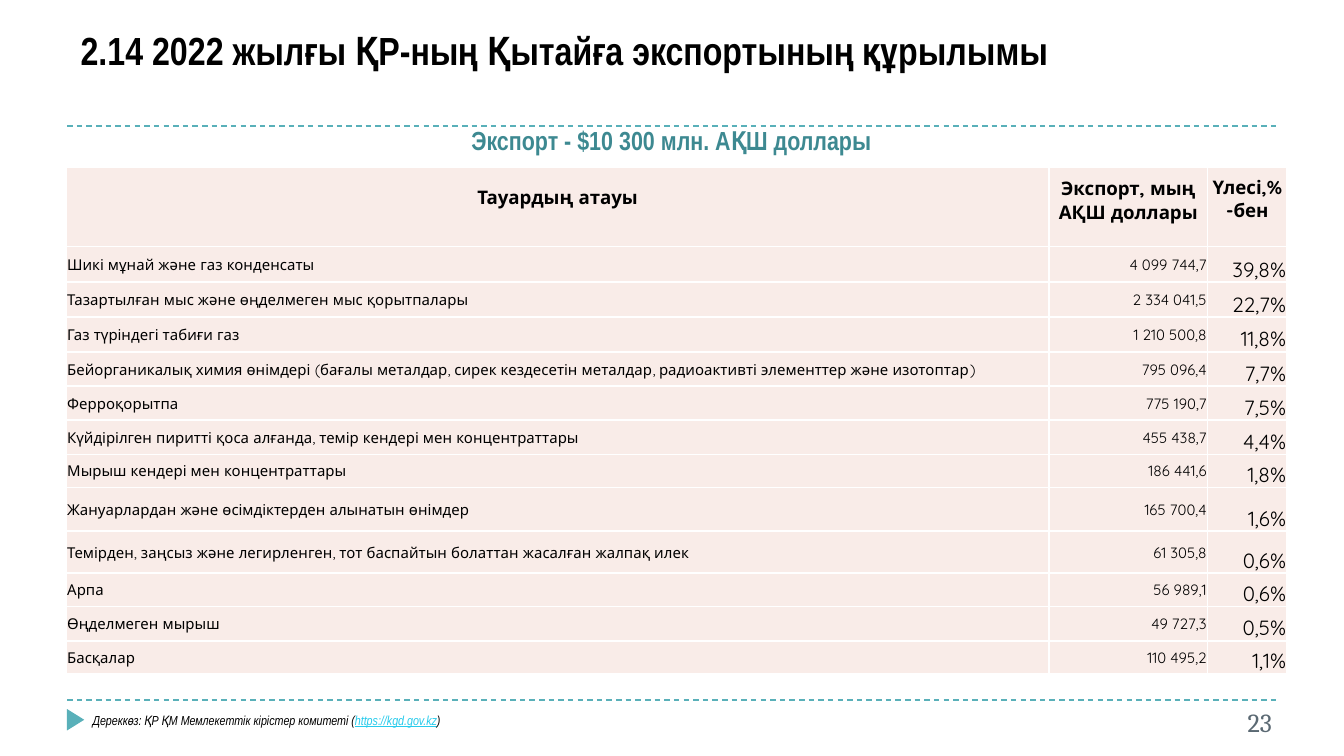
import pptx
import pptx.dml.color
import pptx.enum.dml
import pptx.enum.shapes
import pptx.enum.text
import pptx.oxml
import pptx.oxml.ns
import pptx.util

Pt = pptx.util.Pt
ALIGN = pptx.enum.text.PP_ALIGN
ANCHOR = pptx.enum.text.MSO_ANCHOR

TEAL, BLACK, CELL_FILL, BORDER = "59B0B9", "000000", "F9ECE8", "FFFFFF"
NARROW, TABLE_FONT = "Arial Narrow", "Quicksand"

COLUMN_WIDTHS = [526.5, 85, 42.5]
ROW_HEIGHTS = [42.5, 19.25, 18.75, 18.5, 18.5, 18.25, 18.25, 17.75,
               23.5, 22.5, 17.75, 18.5, 17.75]
HEADERS = ["Тауардың атауы", "Экспорт, мың АҚШ доллары", "Үлесі,% -бен"]
HEADER_BOTTOM_MARGINS = [10.5, 7, 13]
EXPORTS = [
    ("Шикі мұнай және газ конденсаты", "4 099 744,7", "39,8%"),
    ("Тазартылған мыс және өңделмеген мыс қорытпалары", "2 334 041,5", "22,7%"),
    ("Газ түріндегі табиғи газ", "1 210 500,8", "11,8%"),
    ("Бейорганикалық химия өнімдері (бағалы металдар, сирек кездесетін металдар, "
     "радиоактивті элементтер және изотоптар)", "795 096,4", "7,7%"),
    ("Ферроқорытпа", "775 190,7", "7,5%"),
    ("Күйдірілген пиритті қоса алғанда, темір кендері мен концентраттары",
     "455 438,7", "4,4%"),
    ("Мырыш кендері мен концентраттары", "186 441,6", "1,8%"),
    ("Жануарлардан және өсімдіктерден алынатын өнімдер", "165 700,4", "1,6%"),
    ("Темірден, заңсыз және легирленген, тот баспайтын болаттан жасалған жалпақ илек",
     "61 305,8", "0,6%"),
    ("Арпа", "56 989,1", "0,6%"),
    ("Өңделмеген мырыш", "49 727,3", "0,5%"),
    ("Басқалар", "110 495,2", "1,1%"),
]


def rgb(value):
    return pptx.dml.color.RGBColor.from_string(value)


def write(frame, text, size, font=NARROW, color=BLACK, bold=False, italic=False,
          underline=False, align=ALIGN.LEFT):
    """Append a formatted run to the first paragraph of the frame."""
    paragraph = frame.paragraphs[0]
    paragraph.alignment = align
    run = paragraph.add_run()
    run.text = text
    run.font.size = Pt(size)
    run.font.name = font
    run.font.color.rgb = rgb(color)
    run.font.bold = bold
    run.font.italic = italic
    run.font.underline = underline


def add_title(slide, text):
    title = slide.shapes.title
    title.left, title.top, title.width, title.height = Pt(36), Pt(8.5), Pt(549.5), Pt(34.5)
    frame = title.text_frame
    frame.auto_size = pptx.enum.text.MSO_AUTO_SIZE.NONE
    frame.vertical_anchor = ANCHOR.BOTTOM
    write(frame, text, 21, bold=True)


def add_text_area(slide, left, top, width, height, vertical_margin=3.6):
    area = slide.shapes.add_textbox(Pt(left), Pt(top), Pt(width), Pt(height))
    frame = area.text_frame
    frame.word_wrap = True
    frame.margin_top = frame.margin_bottom = Pt(vertical_margin)
    return frame


def add_divider(slide, top):
    divider = slide.shapes.add_connector(
        pptx.enum.shapes.MSO_CONNECTOR.STRAIGHT, Pt(36), Pt(top), Pt(684), Pt(top))
    divider.line.color.rgb = rgb(TEAL)
    divider.line.width = Pt(0.75)
    divider.line.dash_style = pptx.enum.dml.MSO_LINE.DASH
    properties = divider._element.spPr
    properties.append(pptx.oxml.parse_xml(
        f'<a:effectLst {pptx.oxml.ns.nsdecls("a")}/>'))


def add_footer_marker(slide):
    marker = slide.shapes.add_shape(
        pptx.enum.shapes.MSO_SHAPE.ISOSCELES_TRIANGLE,
        Pt(34.75), Pt(381), Pt(11.5), Pt(9.25))
    marker.rotation = 90
    marker.shadow.inherit = False
    marker.fill.solid()
    marker.fill.fore_color.rgb = rgb(TEAL)
    marker.line.fill.background()


def format_cell(cell, anchor, bottom_margin):
    cell.vertical_anchor = anchor
    cell.margin_left = cell.margin_right = cell.margin_top = Pt(0.5)
    cell.margin_bottom = Pt(bottom_margin)
    properties = cell._tc.get_or_add_tcPr()
    for side in ("lnL", "lnR", "lnT", "lnB"):
        properties.append(pptx.oxml.parse_xml(
            f'<a:{side} {pptx.oxml.ns.nsdecls("a")} w="{Pt(1)}"><a:solidFill>'
            f'<a:srgbClr val="{BORDER}"/></a:solidFill></a:{side}>'))
    cell.fill.solid()
    cell.fill.fore_color.rgb = rgb(CELL_FILL)


def add_export_table(slide):
    table = slide.shapes.add_table(
        len(ROW_HEIGHTS), len(COLUMN_WIDTHS), Pt(35.5), Pt(89.5),
        Pt(sum(COLUMN_WIDTHS)), Pt(sum(ROW_HEIGHTS))).table
    for column, width in zip(table.columns, COLUMN_WIDTHS):
        column.width = Pt(width)
    for row, height in zip(table.rows, ROW_HEIGHTS):
        row.height = Pt(height)

    anchors = [ANCHOR.MIDDLE, ANCHOR.MIDDLE, ANCHOR.BOTTOM]
    sizes = [8, 8, 11]
    alignments = [ALIGN.LEFT, ALIGN.RIGHT, ALIGN.RIGHT]
    for r, texts in enumerate([HEADERS, *EXPORTS]):
        is_header = r == 0
        for c, text in enumerate(texts):
            cell = table.cell(r, c)
            format_cell(cell, anchors[c], HEADER_BOTTOM_MARGINS[c] if is_header else 0)
            write(cell.text_frame, text, 10 if is_header else sizes[c],
                  font=TABLE_FONT, bold=is_header,
                  align=ALIGN.CENTER if is_header else alignments[c])


def main():
    deck = pptx.Presentation()
    deck.slide_width, deck.slide_height = Pt(720), Pt(405)
    slide = deck.slides.add_slide(deck.slide_layouts[5])

    for top in (375, 67.5):
        add_divider(slide, top)
    add_footer_marker(slide)
    add_title(slide, "2.14 2022 жылғы ҚР-ның Қытайға экспортының құрылымы")

    page_number = add_text_area(slide, 651.5, 375, 37, 21.5)
    write(page_number, "23", 14, font="Cambria", color="5B6973", align=ALIGN.RIGHT)

    total = add_text_area(slide, 31, 66.5, 657.5, 17.5, vertical_margin=0)
    write(total, "Экспорт - $10 300 млн. АҚШ доллары", 14, color="3D8991",
          bold=True, align=ALIGN.CENTER)

    citation = add_text_area(slide, 42.5, 378, 544.5, 16)
    write(citation, "Дереккөз: ҚР ҚМ Мемлекеттік кірістер комитеті (", 7, italic=True)
    write(citation, "https://kgd.gov.kz", 7, color="26CBEC", italic=True, underline=True)
    write(citation, ")", 7, italic=True)

    add_export_table(slide)
    deck.save("out.pptx")


if __name__ == "__main__":
    main()
